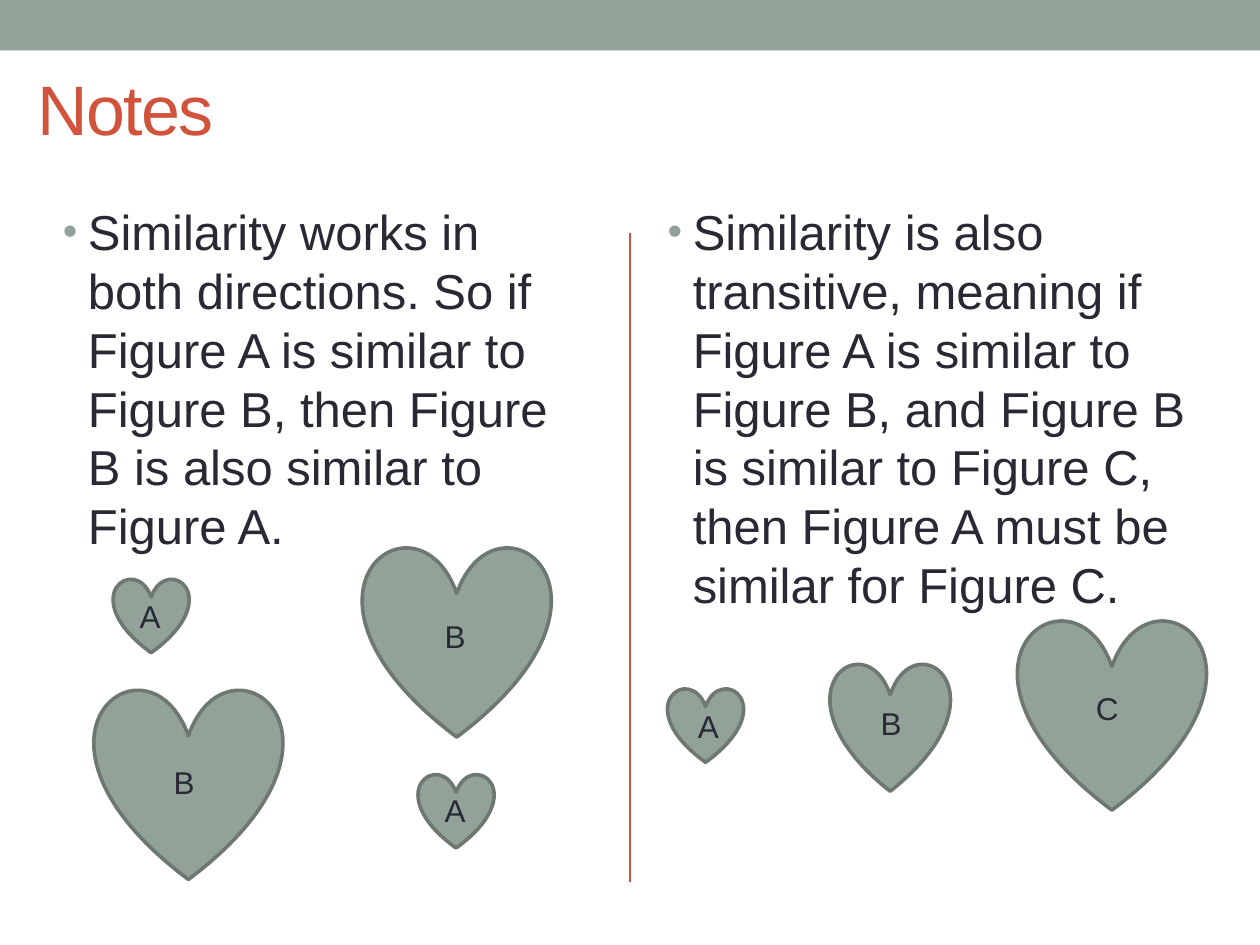
from dataclasses import dataclass

from lxml import etree
from pptx import Presentation
from pptx import util as u
from pptx.dml.color import RGBColor
from pptx.enum import shapes, text
from pptx.oxml import ns

COLORS = {"sage": "93A299", "outline": "6D7871", "accent": "D2533C", "ink": "292934"}
FONT = "Arial"
COLS, ROWS = 100, 75
SMALL, MEDIUM, LARGE = (6, 5.9), (9.5, 10.2), (14.9, 15.2)
LABEL = (4.4, 4)


@dataclass
class Note:
    col: float
    width: float
    words: str


@dataclass
class Heart:
    col: float
    row: float
    size: tuple[float, float]
    label: str
    label_col: float
    label_row: float


NOTES = [
    Note(4, 43, "Similarity works in both directions. So if Figure A is similar to "
                "Figure B, then Figure B is also similar to Figure A."),
    Note(52, 44.3, "Similarity is also transitive, meaning if Figure A is similar to "
                   "Figure B, and Figure B is similar to Figure C, then Figure A must "
                   "be similar for Figure C."),
]
HEARTS = [
    Heart(9, 45.9, SMALL, "A", 10.1, 46.9),
    Heart(28.8, 43.3, LARGE, "B", 34.3, 48.5),
    Heart(33.2, 61.4, SMALL, "A", 34.3, 62.3),
    Heart(7.5, 54.6, LARGE, "B", 12.8, 60.1),
    Heart(53, 54.6, SMALL, "A", 54.4, 55.6),
    Heart(65.9, 52.6, MEDIUM, "B", 68.9, 55.4),
    Heart(80.8, 49.1, LARGE, "C", 86, 54.2),
]

prs = Presentation()
prs.slide_width, prs.slide_height = u.Inches(10), u.Inches(7.5)


def grid(col: float, row: float) -> tuple[int, int]:
    return round(prs.slide_width * col / COLS), round(prs.slide_height * row / ROWS)


def color(name: str) -> RGBColor:
    return RGBColor.from_string(COLORS[name])


def style(p, size: float, name: str) -> None:
    p.alignment = text.PP_ALIGN.LEFT
    p.font.name, p.font.size = FONT, u.Pt(size)
    p.font.color.rgb = color(name)


def add_preset(s, kind, col: float, row: float, size: tuple[float, float]):
    sp = s.shapes.add_shape(kind, *grid(col, row), *grid(*size))
    sp.shadow.inherit = False
    sp.fill.solid()
    sp.fill.fore_color.rgb = color("sage")
    return sp


def add_text(s, col: float, row: float, size: tuple[float, float], words: str, points: float):
    tf = s.shapes.add_textbox(*grid(col, row), *grid(*size)).text_frame
    tf.word_wrap = True
    p = tf.paragraphs[0]
    p.text = words
    style(p, points, "ink")
    return p


def add_title(s, words: str) -> None:
    sp = s.shapes.title
    sp.left, sp.top = grid(2, 3.1)
    sp.width, sp.height = grid(90, 10.8)
    sp.text_frame.vertical_anchor = text.MSO_ANCHOR.MIDDLE
    p = sp.text_frame.paragraphs[0]
    p.text = words
    style(p, 40, "accent")
    p.runs[0].font._element.set("spc", "-100")


def add_divider(s) -> None:
    line = s.shapes.add_connector(
        shapes.MSO_CONNECTOR.STRAIGHT, *grid(50, 18.5), *grid(50, 70))
    line.line.color.rgb = color("accent")
    line.line.width = u.Pt(1.5)
    etree.SubElement(line._element.spPr, ns.qn("a:effectLst"))


def add_note(s, note: Note) -> None:
    p = add_text(s, note.col, 15.5, (note.width, 43.2), note.words, 28)
    p.space_before = u.Pt(5.6)
    props = p._p.get_or_add_pPr()
    indent = u.Inches(0.2)
    props.set("marL", str(indent))
    props.set("indent", str(-indent))
    bullet_color = etree.Element(ns.qn("a:buClr"))
    etree.SubElement(bullet_color, ns.qn("a:srgbClr"), val=COLORS["sage"])
    at = props.index(props.find(ns.qn("a:defRPr")))
    props[at:at] = [
        bullet_color,
        etree.Element(ns.qn("a:buSzPct"), val="85000"),
        etree.Element(ns.qn("a:buFont"), typeface=FONT),
        etree.Element(ns.qn("a:buChar"), char="•"),
    ]


def add_heart(s, heart: Heart) -> None:
    sp = add_preset(s, shapes.MSO_SHAPE.HEART, heart.col, heart.row, heart.size)
    sp.line.color.rgb = color("outline")
    sp.line.width = u.Pt(2.08)
    add_text(s, heart.label_col, heart.label_row, LABEL, heart.label, 18)


def main() -> None:
    s = prs.slides.add_slide(prs.slide_layouts[5])
    bar = add_preset(s, shapes.MSO_SHAPE.RECTANGLE, 0, 0, (COLS, 4))
    bar.line.fill.background()
    add_divider(s)
    add_title(s, "Notes")
    for note in NOTES:
        add_note(s, note)
    for heart in HEARTS:
        add_heart(s, heart)
    prs.save("out.pptx")


if __name__ == "__main__":
    main()
